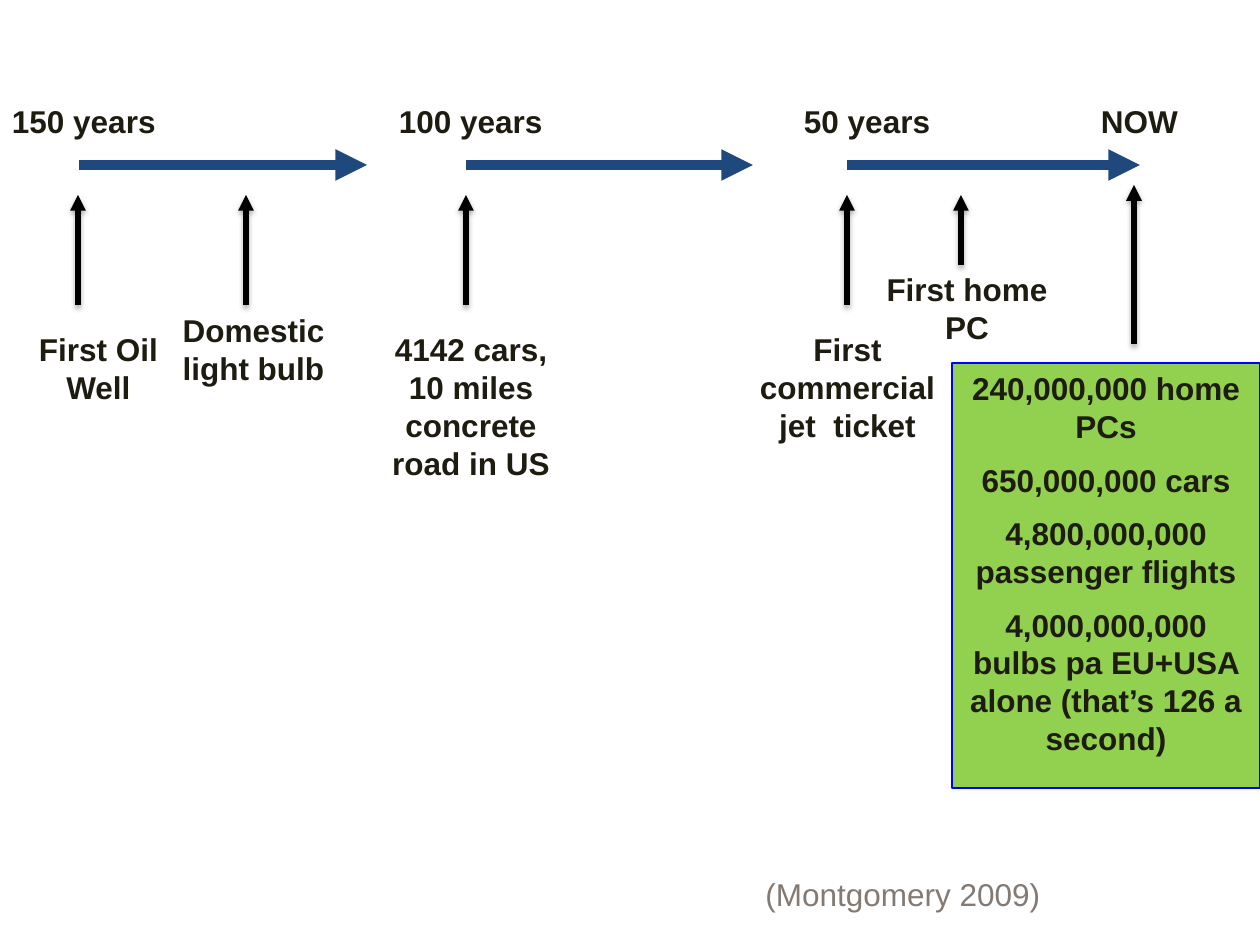
from lxml import etree
from pptx import Presentation
from pptx.dml.color import RGBColor
from pptx.enum.shapes import MSO_CONNECTOR, MSO_SHAPE
from pptx.enum.text import MSO_ANCHOR, MSO_AUTO_SIZE, PP_ALIGN
from pptx.oxml.ns import qn
from pptx.util import Pt

STRAIGHT, RECT = MSO_CONNECTOR.STRAIGHT, MSO_SHAPE.RECTANGLE
TOP = MSO_ANCHOR.TOP
LEFT, CENTER = PP_ALIGN.LEFT, PP_ALIGN.CENTER
GROW = MSO_AUTO_SIZE.SHAPE_TO_FIT_TEXT

INK = RGBColor(0x1E, 0x1C, 0x11)
NAVY = RGBColor(0x1F, 0x49, 0x7D)
BLACK = RGBColor(0, 0, 0)
LIME = RGBColor(0x92, 0xD0, 0x50)
BLUE = RGBColor(0, 0, 0xFF)
GREY = RGBColor(0x83, 0x7A, 0x73)

# Content; all lengths in px
PERIODS = [(79, 367), (466, 753), (847, 1140)]  # from x, to x
DATES = [  # text, left, left inset
    ("150 years", -1, 13),
    ("100 years", 386, 13),
    ("50 years", 774, 30),
    ("NOW", 1071, 30),
]
POINTERS = [  # x, foot, tip
    (78, 305, 195),
    (246, 305, 195),
    (466, 305, 195),
    (847, 305, 195),
    (961, 265, 195),
    (1134, 344, 185),
]
EVENTS = [  # text, left, top, width, height
    ("First Oil Well", 4, 324, 189, 89),
    ("Domestic light bulb", 149, 305, 209, 89),
    ("4142 cars, 10 miles concrete road in US", 377, 324, 188, 165),
    ("First commercial jet  ticket", 743, 324, 209, 126),
    ("First home PC", 863, 264, 208, 89),
]
TODAY = [
    "240,000,000 home PCs",
    "650,000,000 cars",
    "4,800,000,000 passenger flights",
    "4,000,000,000 bulbs pa EU+USA alone (that’s 126 a second)",
]
SOURCE = "(Montgomery 2009)"

prs = Presentation()


def px(n):
    return round(n * 914400 / 126)


prs.slide_width, prs.slide_height = px(1260), px(945)
shapes = prs.slides.add_slide(prs.slide_layouts[6]).shapes


def add_run(p, text, color, bold=False):
    r = p.add_run()
    r.text = text
    r.font.name, r.font.size, r.font.bold = "Arial", Pt(18), bold
    r.font.color.rgb = color


def add_bold(sp, lines, align):
    tf = sp.text_frame
    tf.word_wrap, tf.auto_size, tf.vertical_anchor = True, GROW, TOP
    for i, line in enumerate(lines):
        p = tf.paragraphs[0] if i == 0 else tf.add_paragraph()
        p.alignment = align
        if i:
            p.space_before = Pt(9)
        add_run(p, line, INK, bold=True)
    return tf


def add_arrow(x1, y1, x2, y2, color, width, shadow=False):
    line = shapes.add_connector(STRAIGHT, px(x1), px(y1), px(x2), px(y2))
    line.line.color.rgb, line.line.width = color, Pt(width)
    ln = line.line._get_or_add_ln()
    etree.SubElement(ln, qn("a:tailEnd"), type="triangle")
    effects = etree.SubElement(line._element.spPr, qn("a:effectLst"))
    if shadow:
        outer = etree.SubElement(effects, qn("a:outerShdw"), blurRad="40000",
                                 dist="23000", dir="5400000", rotWithShape="0")
        tint = etree.SubElement(outer, qn("a:srgbClr"), val="000000")
        etree.SubElement(tint, qn("a:alpha"), val="35000")


# Timeline and its dates
for start, end in PERIODS:
    add_arrow(start, 165, end, 165, NAVY, 6)
for text, left, inset in DATES:
    sp = shapes.add_textbox(px(left), px(96), px(189), px(50))
    add_bold(sp, [text], LEFT).margin_left = px(inset)

# Events and their pointers
for x, foot, tip in POINTERS:
    add_arrow(x, foot, x, tip, BLACK, 3, shadow=True)
for text, *box in EVENTS:
    add_bold(shapes.add_textbox(*map(px, box)), [text], CENTER)

# Figures for today
sp = shapes.add_shape(RECT, px(952), px(363), px(308), px(425))
sp.shadow.inherit = False
sp.fill.solid()
sp.fill.fore_color.rgb = LIME
sp.line.color.rgb, sp.line.width = BLUE, Pt(0.75)
add_bold(sp, TODAY, CENTER)

# Source
tf = shapes.add_textbox(px(753), px(869), px(302), px(50)).text_frame
tf.word_wrap, tf.auto_size = False, GROW
add_run(tf.paragraphs[0], SOURCE, GREY)

prs.save("out.pptx")
